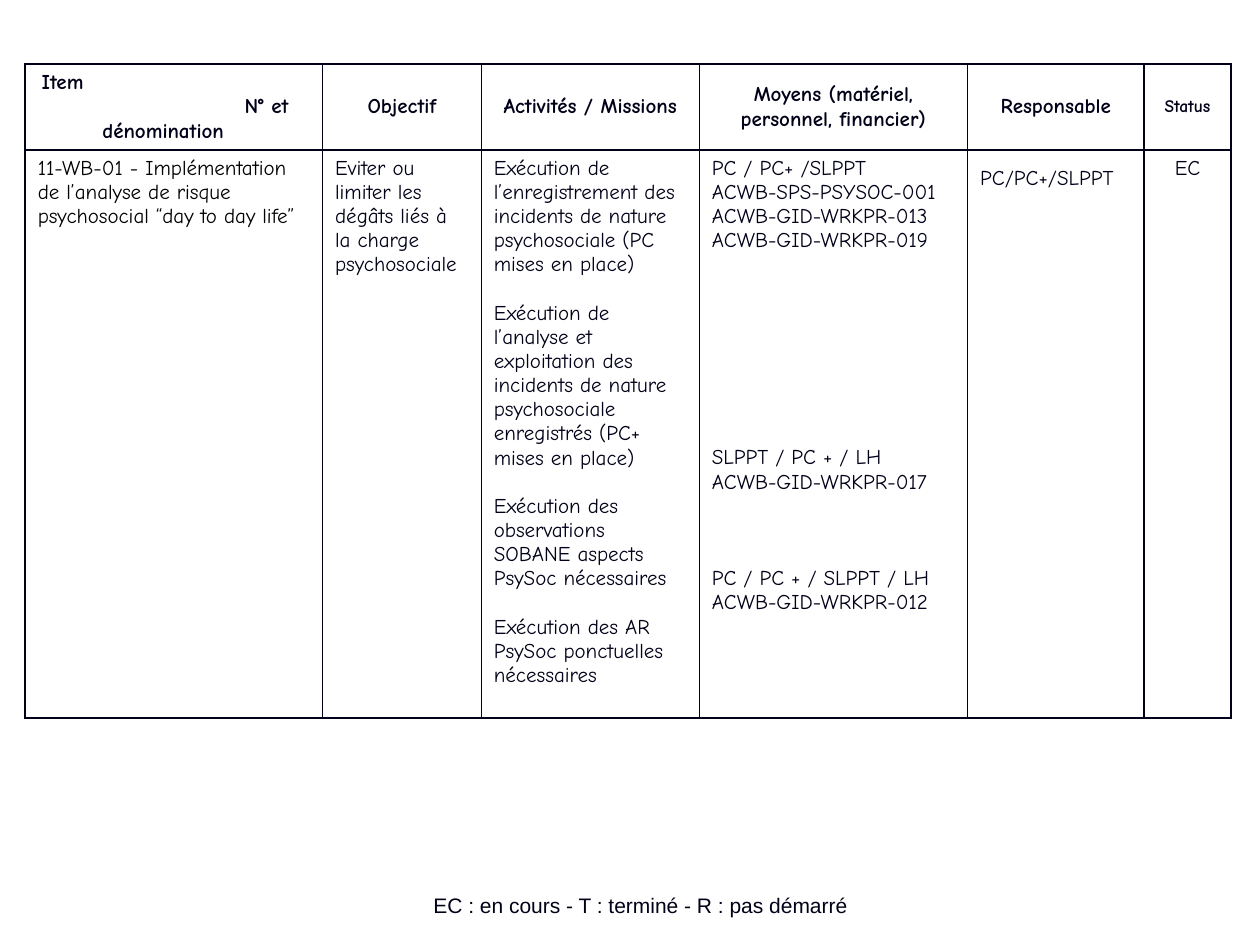
from pptx import Presentation, util as u
from pptx.dml.color import RGBColor
from pptx.enum import text as t
from pptx.oxml import parse_xml
from pptx.oxml.ns import nsdecls

INK = "000018"
LINE = 13.8  # line pitch of the table text, points
LEFT, MID, RIGHT = t.PP_ALIGN.LEFT, t.PP_ALIGN.CENTER, t.PP_ALIGN.RIGHT


def color(code):
    return RGBColor.from_string(code)


def write(frame, paras, **form):
    """Fill a frame with (text, alignment, blank lines before) entries."""
    look = {"name": "Comic Neue", "size": u.Pt(12), "bold": False} | form
    ink = look.pop("ink", INK)
    frame.word_wrap = True
    for i, (words, side, gap) in enumerate(paras):
        para = frame.add_paragraph() if i else frame.paragraphs[0]
        para.alignment = side
        if gap:
            para.space_before = u.Pt(round(gap * LINE, 1))
        run = para.add_run()
        run.text = words
        for key, val in look.items():
            setattr(run.font, key, val)
        run.font.color.rgb = color(ink)


prs = Presentation()
prs.slide_width, prs.slide_height = u.Inches(10), u.Inches(7.5)
slide = prs.slides.add_slide(prs.slide_layouts[6])

# Table grid
cols = [2.36, 1.26, 1.73, 2.13, 1.4, 0.69]
rows = [0.68, 4.51]
table = slide.shapes.add_table(
    len(rows), len(cols), u.Inches(0.2), u.Inches(0.51),
    u.Inches(sum(cols)), u.Inches(sum(rows))).table
table.first_row = table.horz_banding = False
for col, wide in zip(table.columns, cols):
    col.width = u.Inches(wide)
for row, high in zip(table.rows, rows):
    row.height = u.Inches(high)

# Plain cells with thin dark borders
for cell in table.iter_cells():
    props = cell._tc.get_or_add_tcPr()
    for edge in ("lnL", "lnR", "lnT", "lnB"):
        props.append(parse_xml(
            f'<a:{edge} {nsdecls("a")} w="12700"><a:solidFill>'
            f'<a:srgbClr val="{INK}"/></a:solidFill></a:{edge}>'))
    cell.fill.background()

# Header row
heads = [
    [("Item", LEFT, 0), ("N° et", RIGHT, 0), ("dénomination", MID, 0)],
    [("Objectif", MID, 0)],
    [("Activités / Missions", MID, 0)],
    [("Moyens (matériel, personnel, financier)", MID, 0)],
    [("Responsable", MID, 0)],
    [("Status", MID, 0)],
]
for i, paras in enumerate(heads):
    cell = table.cell(0, i)
    cell.vertical_anchor = t.MSO_ANCHOR.MIDDLE
    size = 10 if i == len(heads) - 1 else 12
    write(cell.text_frame, paras, bold=True, size=u.Pt(size))
item, number, _ = table.cell(0, 0).text_frame.paragraphs
item._p.get_or_add_pPr().set("marL", str(u.Inches(0.03)))
number._p.get_or_add_pPr().set("marR", str(u.Inches(0.17)))

# Action row
body = [
    [("11-WB-01 - Implémentation de l’analyse de risque psychosocial "
      "“day to day life”", LEFT, 0)],
    [("Eviter ou limiter les dégâts liés à la charge psychosociale", LEFT, 0)],
    [("Exécution de l’enregistrement des incidents de nature psychosociale "
      "(PC mises en place)", LEFT, 0),
     ("Exécution de l’analyse et exploitation des incidents de nature "
      "psychosociale enregistrés (PC+ mises en place)", LEFT, 1),
     ("Exécution des observations SOBANE aspects PsySoc nécessaires", LEFT, 1),
     ("Exécution des AR PsySoc ponctuelles nécessaires", LEFT, 1)],
    [("PC / PC+ /SLPPT", LEFT, 0),
     ("ACWB-SPS-PSYSOC-001", LEFT, 0),
     ("ACWB-GID-WRKPR-013", LEFT, 0),
     ("ACWB-GID-WRKPR-019", LEFT, 0),
     ("SLPPT / PC + / LH", LEFT, 8),
     ("ACWB-GID-WRKPR-017", LEFT, 0),
     ("PC / PC + / SLPPT / LH", LEFT, 3),
     ("ACWB-GID-WRKPR-012", LEFT, 0)],
    [("PC/PC+/SLPPT", LEFT, 0)],
    [("EC", MID, 0)],
]
for i, paras in enumerate(body):
    write(table.cell(1, i).text_frame, paras, ink=INK if i else "000000")
table.cell(1, 4).margin_top = u.Inches(0.13)

# Legend of the status codes
box = slide.shapes.add_textbox(
    u.Inches(2.33), u.Inches(6.83), u.Inches(5.51), u.Inches(0.5))
box.text_frame.vertical_anchor = t.MSO_ANCHOR.BOTTOM
write(box.text_frame, [("EC : en cours - T : terminé - R : pas démarré", MID, 0)],
      name="Arial")

prs.save("out.pptx")
